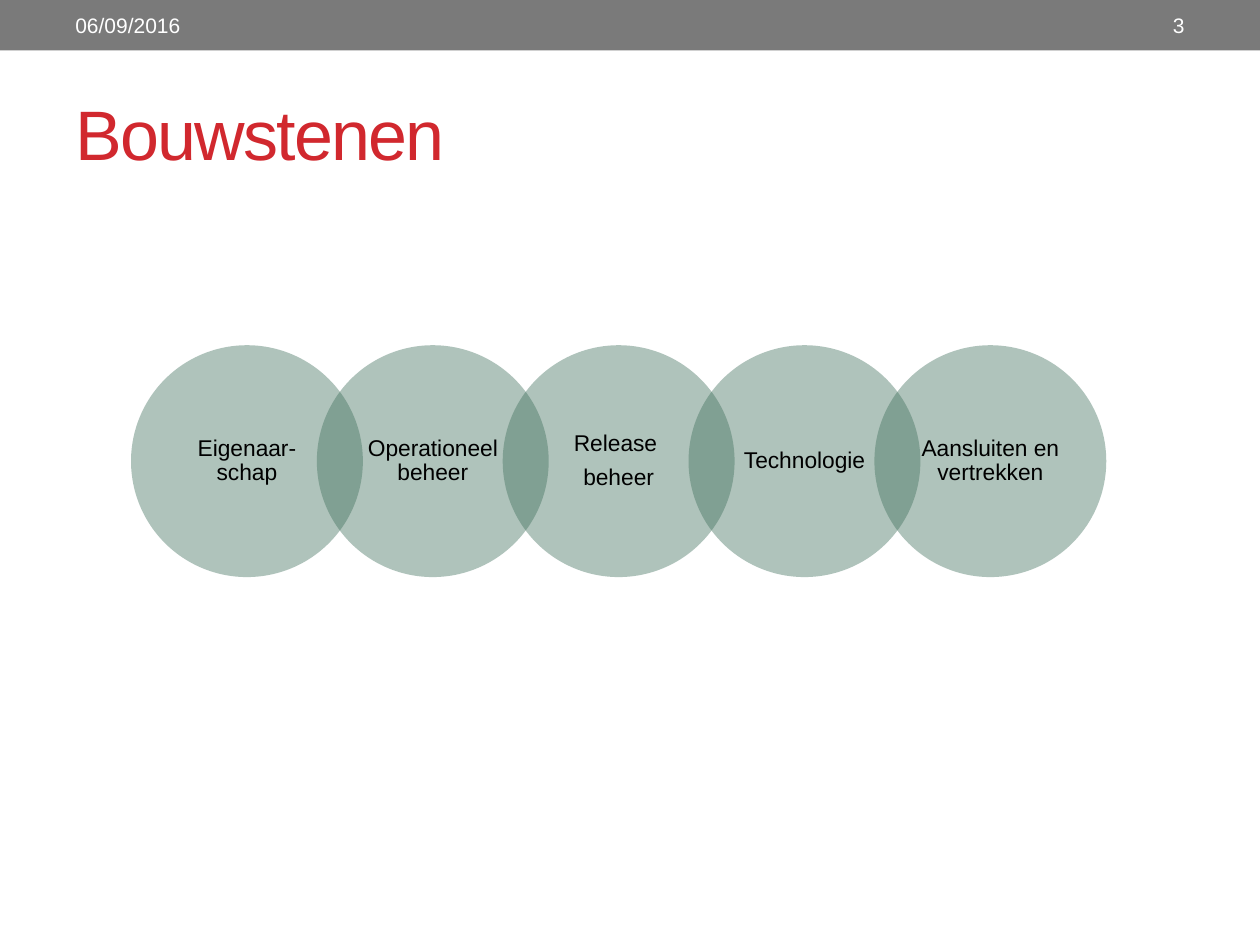
from lxml import etree
from pptx import Presentation
from pptx import util as u
from pptx.dml.color import RGBColor
from pptx.enum import shapes, text
from pptx.oxml import ns

COLOURS = {"bar": "7A7A7A", "title": "D1282E", "circle": "3E6E5A",
           "label": "000000", "header": "FFFFFF"}
FONT = "Arial"
BLOCKS = [["Eigenaar-schap"], ["Operationeel beheer"], ["Release ", "beheer"],
          ["Technologie"], ["Aansluiten en vertrekken"]]
DIAMETER = 1.84
LABEL_SIZE = 1.3
LEFT, TOP, STEP = 1.04, 2.74, 1.475


def box(left, top, width, height):
    return [u.Inches(value) for value in (left, top, width, height)]


def colour(name):
    return RGBColor.from_string(COLOURS[name])


def add_run(paragraph, content, size, colour_name):
    run = paragraph.add_run()
    run.text = content
    run.font.name = FONT
    run.font.size = u.Pt(size)
    run.font.color.rgb = colour(colour_name)
    return run


def add_filled_shape(container, kind, bounds, colour_name, opacity=100):
    shape = container.add_shape(kind, *bounds)
    shape.shadow.inherit = False
    shape.fill.solid()
    shape.fill.fore_color.rgb = colour(colour_name)
    shape.line.fill.background()
    if opacity < 100:
        fill_colour = shape.fill._xPr.find(ns.qn("a:solidFill"))[0]
        alpha = etree.SubElement(fill_colour, ns.qn("a:alpha"))
        alpha.set("val", str(opacity * 1000))


def add_text_box(container, bounds):
    frame = container.add_textbox(*bounds).text_frame
    frame.word_wrap = True
    frame.vertical_anchor = text.MSO_ANCHOR.MIDDLE
    return frame


def add_header_text(slide, bounds, content, alignment):
    paragraph = add_text_box(slide.shapes, bounds).paragraphs[0]
    paragraph.alignment = alignment
    add_run(paragraph, content, 12, "header")


def format_title(slide, content):
    title = slide.shapes.title
    title.left, title.top, title.width, title.height = box(0.5, 0.51, 9, 1.08)
    frame = title.text_frame
    frame.word_wrap = True
    frame.vertical_anchor = text.MSO_ANCHOR.MIDDLE
    paragraph = frame.paragraphs[0]
    paragraph.alignment = text.PP_ALIGN.LEFT
    run = add_run(paragraph, content, 40, "title")
    run.font._element.set("spc", "-100")


def add_label(container, bounds, lines):
    frame = add_text_box(container, bounds)
    frame.margin_left = frame.margin_right = u.Inches(0.09)
    frame.margin_top = frame.margin_bottom = u.Inches(0.02)
    for index, line in enumerate(lines):
        paragraph = frame.add_paragraph() if index else frame.paragraphs[0]
        paragraph.alignment = text.PP_ALIGN.CENTER
        paragraph.line_spacing = 0.9
        paragraph.space_after = u.Pt(5.4)
        add_run(paragraph, line, 13, "label")


def add_circle_chain(slide):
    group = slide.shapes.add_group_shape()
    inset = (DIAMETER - LABEL_SIZE) / 2
    for index, lines in enumerate(BLOCKS):
        left = LEFT + index * STEP
        add_filled_shape(group.shapes, shapes.MSO_SHAPE.OVAL,
                         box(left, TOP, DIAMETER, DIAMETER), "circle", 41)
        add_label(group.shapes,
                  box(left + inset, TOP + inset, LABEL_SIZE, LABEL_SIZE), lines)


def main():
    presentation = Presentation()
    presentation.slide_width = u.Inches(10)
    presentation.slide_height = u.Inches(7.5)
    slide = presentation.slides.add_slide(presentation.slide_layouts[5])
    add_filled_shape(slide.shapes, shapes.MSO_SHAPE.RECTANGLE,
                     box(0, 0, 10, 0.4), "bar")
    format_title(slide, "Bouwstenen")
    add_header_text(slide, box(8.33, 0.02, 1.17, 0.36), "3", text.PP_ALIGN.RIGHT)
    add_circle_chain(slide)
    add_header_text(slide, box(0.5, 0.02, 3.17, 0.36), "06/09/2016",
                    text.PP_ALIGN.LEFT)
    presentation.save("out.pptx")


if __name__ == "__main__":
    main()
